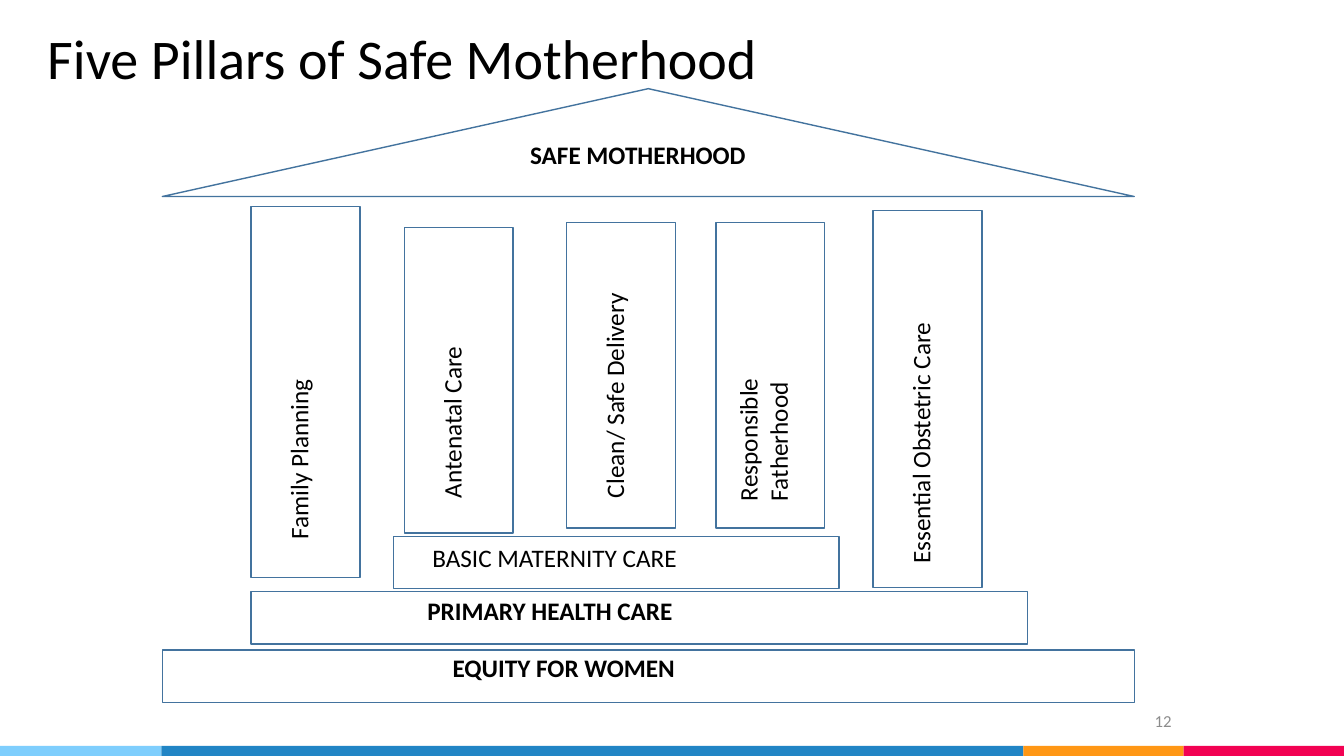
from pptx import Presentation
from pptx.dml.color import RGBColor
from pptx.enum.shapes import MSO_SHAPE
from pptx.enum.text import MSO_ANCHOR, PP_ALIGN
from pptx.util import Inches, Pt

WIDTH, HEIGHT = 13.33, 7.5
COLUMNS, ROWS = 1333, 750
FONT, BLACK, GREY, OUTLINE = "Calibri", "000000", "8C8C8C", "43739E"

TITLE = ("Five Pillars of Safe Motherhood", (37, 26, 1149, 134))
PAGE_NUMBER = ("12", (872, 695, 300, 40))
ROOF = (161, 88, 964, 107)
ROOF_LABEL = ("SAFE MOTHERHOOD", (516, 133, 334, 40), True)

PILLAR_WIDTH = 108
PILLARS = [
    {"label": "Family Planning", "left": 249, "top": 205, "height": 368,
     "label_top": 251, "label_width": 50, "label_height": 294},
    {"label": "Antenatal Care", "left": 401, "top": 226, "height": 303,
     "label_top": 258, "label_width": 50, "label_height": 246},
    {"label": "Clean/ Safe Delivery", "left": 562, "top": 221, "height": 303,
     "label_top": 258, "label_width": 50, "label_height": 246},
    {"label": "Responsible Fatherhood", "left": 710, "top": 221, "height": 303,
     "label_top": 261, "label_width": 81, "label_height": 246},
    {"label": "Essential Obstetric Care", "left": 866, "top": 209, "height": 374,
     "label_top": 245, "label_width": 50, "label_height": 324},
]

STEP_HEIGHT = 52
STEPS = [
    ((390, 532, 442), ("BASIC MATERNITY CARE", (419, 533, 375, 40), False)),
    ((249, 587, 770), ("PRIMARY HEALTH CARE", (414, 586, 388, 40), True)),
    ((161, 645, 964), ("EQUITY FOR WOMEN", (439, 642, 332, 40), True)),
]

BAND_TOP = 740
BAND_EDGES = [0, 160, 1015, 1174, COLUMNS]
BAND_COLORS = ["7ECEFD", "2185C5", "FF9715", "F20253"]


def color(value):
    return RGBColor.from_string(value)


def place(left, top, width, height):
    across, down = WIDTH / COLUMNS, HEIGHT / ROWS
    return (Inches(left * across), Inches(top * down),
            Inches(width * across), Inches(height * down))


def add_figure(slide, kind, area, fill=None, line=None):
    shape = slide.shapes.add_shape(kind, *place(*area))
    shape.shadow.inherit = False
    if fill:
        shape.fill.solid()
        shape.fill.fore_color.rgb = color(fill)
    else:
        shape.fill.background()
    if line:
        shape.line.color.rgb = color(line)
        shape.line.width = Pt(1)
    else:
        shape.line.fill.background()


def add_text(slide, text, area, bold=False, size=18, ink=BLACK, upward=False):
    box = slide.shapes.add_textbox(*place(*area))
    frame = box.text_frame
    frame.word_wrap = True
    frame.text = text
    if upward:
        frame._txBody.bodyPr.set("vert", "vert270")
    paragraph = frame.paragraphs[0]
    paragraph.font.name = FONT
    paragraph.font.size = Pt(size)
    paragraph.font.bold = bold
    paragraph.font.color.rgb = color(ink)
    return frame


def add_pillar(slide, pillar):
    add_figure(slide, MSO_SHAPE.RECTANGLE,
               (pillar["left"], pillar["top"], PILLAR_WIDTH, pillar["height"]),
               line=OUTLINE)
    label_left = pillar["left"] + (PILLAR_WIDTH - pillar["label_width"]) / 2 - 2
    add_text(slide, pillar["label"],
             (label_left, pillar["label_top"], pillar["label_width"],
              pillar["label_height"]), upward=True)


def main():
    presentation = Presentation()
    presentation.slide_width = Inches(WIDTH)
    presentation.slide_height = Inches(HEIGHT)
    slide = presentation.slides.add_slide(presentation.slide_layouts[6])

    for left, right, fill in zip(BAND_EDGES, BAND_EDGES[1:], BAND_COLORS):
        add_figure(slide, MSO_SHAPE.RECTANGLE,
                   (left, BAND_TOP, right - left, ROWS - BAND_TOP), fill=fill)

    title = add_text(slide, *TITLE, size=40)
    title.paragraphs[0].line_spacing = 0.9
    number = add_text(slide, *PAGE_NUMBER, size=12, ink=GREY)
    number.vertical_anchor = MSO_ANCHOR.MIDDLE
    number.paragraphs[0].alignment = PP_ALIGN.RIGHT

    add_figure(slide, MSO_SHAPE.FLOWCHART_EXTRACT, ROOF, line=OUTLINE)
    add_text(slide, *ROOF_LABEL)
    for pillar in PILLARS:
        add_pillar(slide, pillar)
    for step, label in STEPS:
        add_figure(slide, MSO_SHAPE.RECTANGLE, (*step, STEP_HEIGHT), line=OUTLINE)
        add_text(slide, *label)

    presentation.save("out.pptx")


if __name__ == "__main__":
    main()
